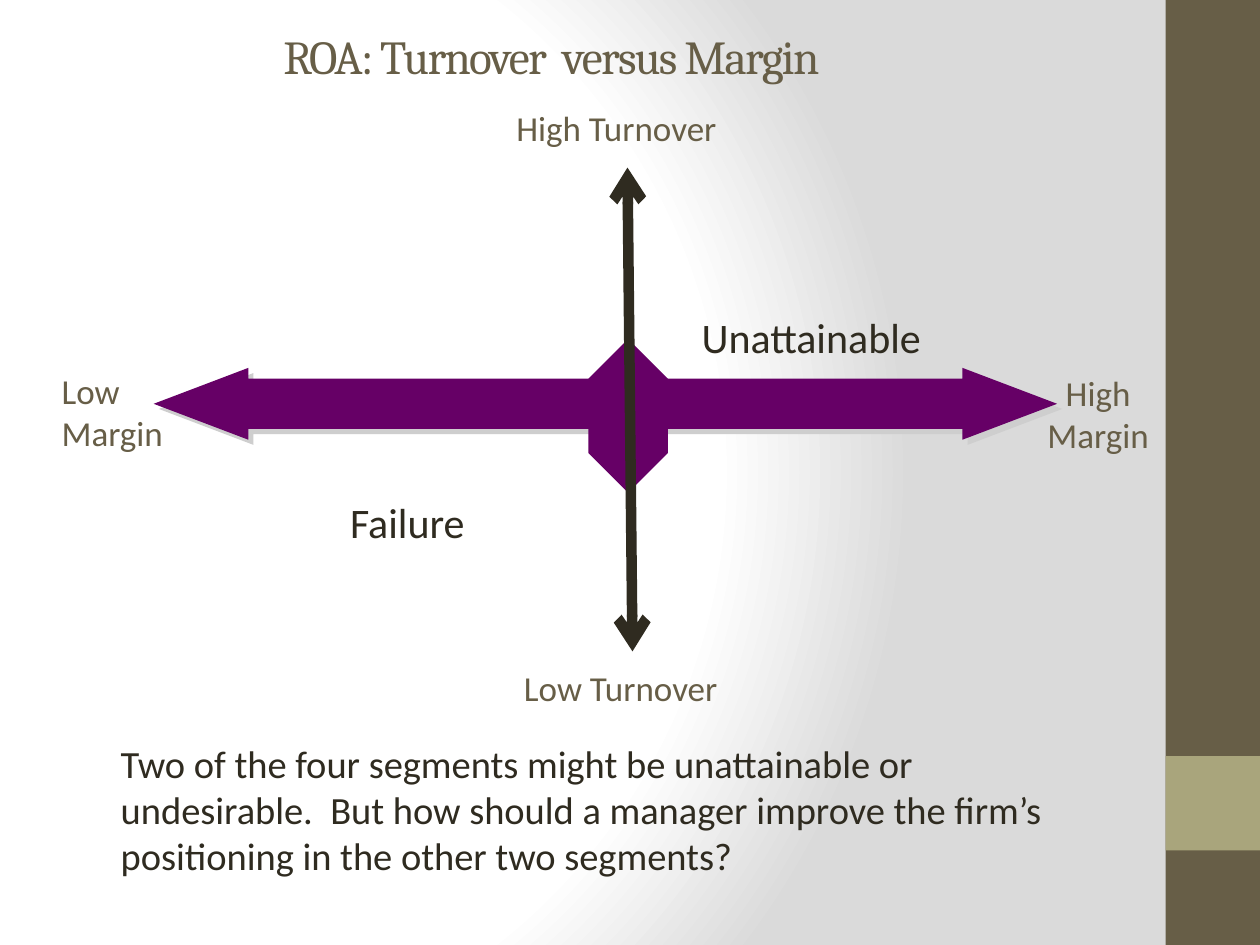
import pptx
import pptx.dml.color
import pptx.enum.shapes
import pptx.enum.text
import pptx.oxml
import pptx.oxml.ns
import pptx.util
from pptx.util import Inches

OLIVE, SAGE, INK, PURPLE = "675E47", "A9A57C", "2F2B20", "660066"
SHAPE = pptx.enum.shapes.MSO_SHAPE
ALIGN = pptx.enum.text.PP_ALIGN
ANCHOR = pptx.enum.text.MSO_ANCHOR
NS = pptx.oxml.ns.nsdecls("a", "p")


def rgb(value):
    return pptx.dml.color.RGBColor.from_string(value)


def add_text(slide, box, text, size=20, color=OLIVE, font="Calibri", wrap=False,
             align=ALIGN.LEFT, anchor=ANCHOR.TOP, spacing=None):
    frame = slide.shapes.add_textbox(*map(Inches, box)).text_frame
    frame.word_wrap = wrap
    frame.vertical_anchor = anchor
    for number, line in enumerate(text.split("\n")):
        paragraph = frame.add_paragraph() if number else frame.paragraphs[0]
        paragraph.alignment = align
        run = paragraph.add_run()
        run.text = line
        run.font.size = pptx.util.Pt(size)
        run.font.name = font
        run.font.color.rgb = rgb(color)
        if spacing is not None:
            run.font._element.set("spc", str(spacing))


def add_block(slide, kind, box, color, adjustments=()):
    block = slide.shapes.add_shape(kind, *map(Inches, box))
    block.shadow.inherit = False
    block.fill.solid()
    block.fill.fore_color.rgb = rgb(color)
    block.line.fill.background()
    for index, value in enumerate(adjustments):
        block.adjustments[index] = value
    return block


def set_background(slide):
    stops = "".join(
        f'<a:gs pos="{position * 1000}"><a:srgbClr val="{color}"/></a:gs>'
        for position, color in ((0, "FFFFFF"), (75, "FFFFFF"), (100, "DADADA")))
    slide.element.cSld.insert(0, pptx.oxml.parse_xml(
        f'<p:bg {NS}><p:bgPr><a:gradFill rotWithShape="1"><a:gsLst>{stops}</a:gsLst>'
        '<a:path path="circle"><a:fillToRect l="20000" t="50000" r="100000" b="50000"/>'
        '</a:path></a:gradFill><a:effectLst/></p:bgPr></p:bg>'))


def add_side_band(slide, left, top, width, height):
    add_block(slide, SHAPE.RECTANGLE, (left, top, width, height), OLIVE)
    add_block(slide, SHAPE.RECTANGLE, (left, top + 0.8 * height, width, width), SAGE)


def add_turnover_axis(slide, start, end):
    axis = slide.shapes.add_connector(
        pptx.enum.shapes.MSO_CONNECTOR.STRAIGHT, *map(Inches, start + end))
    axis.line.color.rgb = rgb(INK)
    axis.line.width = pptx.util.Pt(6)
    line = axis.line._get_or_add_ln()
    for end_name in ("headEnd", "tailEnd"):
        line.append(pptx.oxml.parse_xml(f'<a:{end_name} {NS} type="arrow"/>'))
    axis._element.spPr.append(pptx.oxml.parse_xml(f"<a:effectLst {NS}/>"))


def add_margin_axis(slide, box):
    arrow = add_block(slide, SHAPE.LEFT_RIGHT_ARROW, box, PURPLE, (0.701, 1.317))
    effects = arrow._element.spPr.find(pptx.oxml.ns.qn("a:effectLst"))
    effects.append(pptx.oxml.parse_xml(
        f'<a:outerShdw {NS} dist="{pptx.util.Pt(4.2)}" dir="2700000" algn="ctr" '
        'rotWithShape="0"><a:srgbClr val="CECECE"/></a:outerShdw>'))


def add_matrix(slide, left, top, width, height):
    # Axis end labels
    label_top = top + 2.08
    add_text(slide, (left, label_top, 1.05, 0.79), "Low\nMargin")
    add_text(slide, (left + width - 1.05, label_top + 0.02, 1.05, 0.79),
             "High\nMargin", align=ALIGN.CENTER)
    add_text(slide, (left + 3.67, top + height - 0.43, 1.75, 0.43), "Low Turnover")
    add_text(slide, (left + 3.61, top, 1.8, 0.43), "High Turnover")

    # Axes
    add_margin_axis(slide, (left + 0.83, top + 2.12, 7.17, 0.57))
    add_block(slide, SHAPE.UP_DOWN_ARROW, (left + 4.28, top + 1.89, 0.63, 1.22),
              PURPLE, (0.678, 1.073))
    add_turnover_axis(slide, (left + 4.59, top + 0.53), (left + 4.63, top + 4.37))

    # Segment labels
    add_text(slide, (left + 2.29, top + 3.09, 1.12, 0.5), "Failure", size=24, color=INK)
    add_text(slide, (left + 5.08, top + 1.62, 1.96, 0.5), "Unattainable",
             size=24, color=INK)


def main():
    deck = pptx.Presentation()
    deck.slide_width, deck.slide_height = Inches(10), Inches(7.5)
    slide = deck.slides.add_slide(deck.slide_layouts[6])
    set_background(slide)
    add_side_band(slide, 9.25, 0, 0.75, 7.5)
    add_text(slide, (2.15, 0.16, 6.44, 0.57), "ROA: Turnover  versus Margin", size=27,
             font="Cambria", wrap=True, anchor=ANCHOR.MIDDLE, spacing=-100)
    add_matrix(slide, 0.39, 0.8, 8.85, 4.87)
    # Closing question
    add_text(slide, (0.86, 5.82, 7.89, 1.21),
             "Two of the four segments might be unattainable or undesirable.  "
             "But how should a manager improve the firm’s positioning in the "
             "other two segments?", size=22, color=INK, wrap=True)
    deck.save("out.pptx")


if __name__ == "__main__":
    main()
